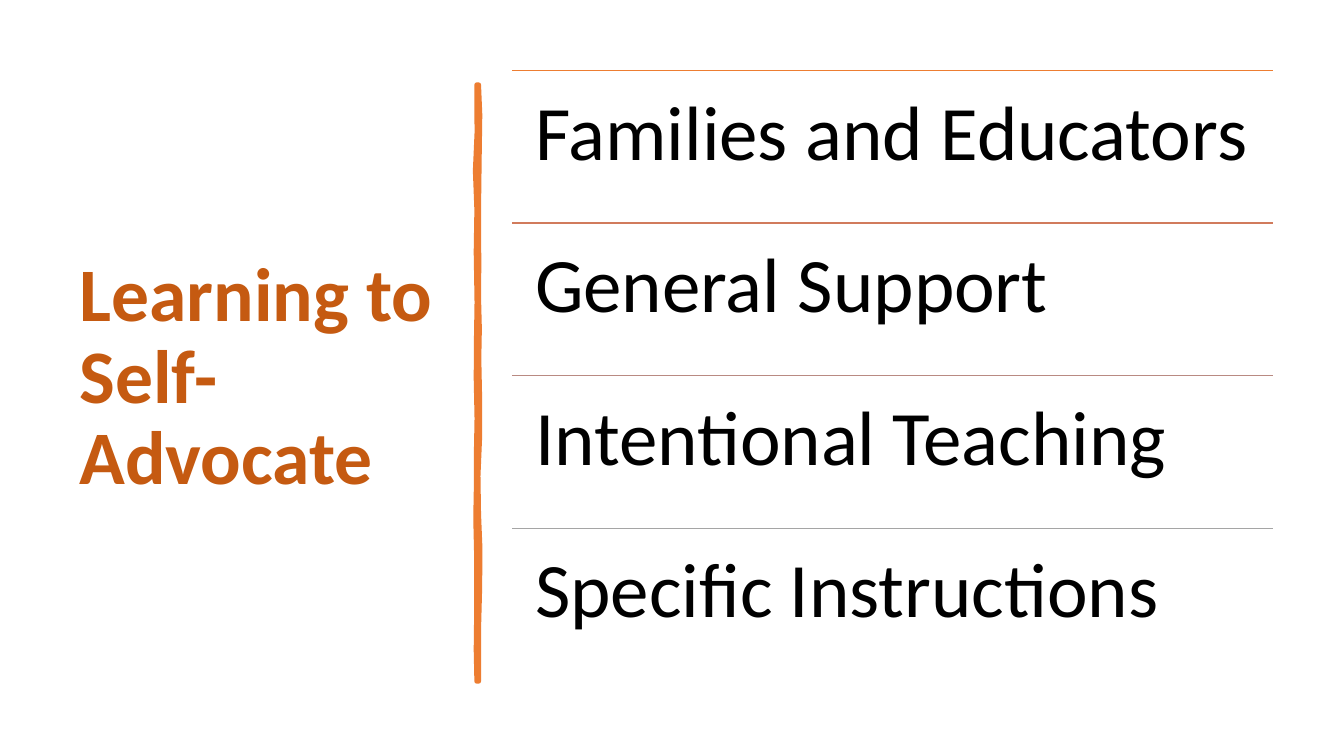
import pptx
import pptx.util
import pptx.dml.color
import pptx.enum.shapes
import pptx.enum.text
import pptx.oxml.ns
import lxml.etree

Pt = pptx.util.Pt

TITLE = "Learning to Self-Advocate"
TOPICS = [
    ("Families and Educators", "orange"),
    ("General Support", "clay"),
    ("Intentional Teaching", "mauve"),
    ("Specific Instructions", "gray"),
]
COLORS = {
    "title": "C55A11",
    "text": "000000",
    "orange": "ED7D31",
    "clay": "D17B5C",
    "mauve": "B98A82",
    "gray": "A5A5A5",
}
TITLE_BOX = (49.7, 50.4, 269.3, 439.9)
LIST_LEFT, LIST_TOP, LIST_WIDTH, ROW_HEIGHT = 365.8, 50.4, 543.6, 109
INSET = 16.5
BRUSH_RIGHT = [
    (342, 60.5), (342.9, 82), (342.5, 110), (342, 150), (342.2, 190),
    (342, 212), (342.6, 235), (342.2, 256), (342.8, 285), (342.8, 312),
    (341.6, 340), (342, 367), (343, 392), (342.8, 420), (342, 450), (342, 486.7),
]
BRUSH_LEFT = [
    (340.5, 486.7), (340, 464), (340.3, 441), (340.4, 401), (339.7, 370),
    (340.2, 343), (340.2, 320), (340.6, 299), (340, 270), (340.2, 241),
    (340.6, 216), (340, 180), (340.5, 150), (339.4, 122), (340.6, 95), (340.5, 60.5),
]


def rgb(name):
    return pptx.dml.color.RGBColor.from_string(COLORS[name])


def write(sp, text, size, color, bold, anchor, inset):
    tf = sp.text_frame
    frame = {"word_wrap": True, "vertical_anchor": anchor,
             "auto_size": pptx.enum.text.MSO_AUTO_SIZE.NONE}
    for side in ("left", "top", "right", "bottom"):
        frame["margin_" + side] = Pt(inset if inset else (7.2 if side in ("left", "right") else 3.6))
    p = tf.paragraphs[0]
    r = p.add_run()
    r.text = text
    formats = [
        (tf, frame),
        (p, {"line_spacing": 0.9, "alignment": pptx.enum.text.PP_ALIGN.LEFT}),
        (r.font, {"name": "Calibri", "size": Pt(size), "bold": bold}),
    ]
    for target, values in formats:
        for key, value in values.items():
            setattr(target, key, value)
    r.font.color.rgb = rgb(color)


def add_title(slide):
    sp = slide.shapes.title
    for key, value in zip(("left", "top", "width", "height"), TITLE_BOX):
        setattr(sp, key, Pt(value))
    write(sp, TITLE, 54, "title", True, pptx.enum.text.MSO_ANCHOR.MIDDLE, None)


def add_brush_line(slide):
    points = [(Pt(x), Pt(y)) for x, y in BRUSH_RIGHT + BRUSH_LEFT]
    builder = slide.shapes.build_freeform(*points[0], scale=1.0)
    builder.add_line_segments(points[1:], close=True)
    sp = builder.convert_to_shape()
    sp.shadow.inherit = False
    sp.fill.solid()
    sp.fill.fore_color.rgb = rgb("orange")
    sp.line.color.rgb = rgb("orange")
    sp.line.width = Pt(3.25)


def add_topic(slide, top, text, color):
    right = LIST_LEFT + LIST_WIDTH
    rule = slide.shapes.add_connector(
        pptx.enum.shapes.MSO_CONNECTOR.STRAIGHT,
        Pt(LIST_LEFT), Pt(top), Pt(right), Pt(top))
    rule.line.color.rgb = rgb(color)
    rule.line.width = Pt(1)
    lxml.etree.SubElement(rule._element.spPr, pptx.oxml.ns.qn("a:effectLst"))
    sp = slide.shapes.add_textbox(Pt(LIST_LEFT), Pt(top), Pt(LIST_WIDTH), Pt(ROW_HEIGHT))
    write(sp, text, 55, "text", False, pptx.enum.text.MSO_ANCHOR.TOP, INSET)


def main():
    prs = pptx.Presentation()
    prs.slide_width, prs.slide_height = Pt(960), Pt(540)
    slide = prs.slides.add_slide(prs.slide_layouts[5])
    add_title(slide)
    add_brush_line(slide)
    for i, (text, color) in enumerate(TOPICS):
        add_topic(slide, LIST_TOP + i * ROW_HEIGHT, text, color)
    prs.save("out.pptx")


if __name__ == "__main__":
    main()
